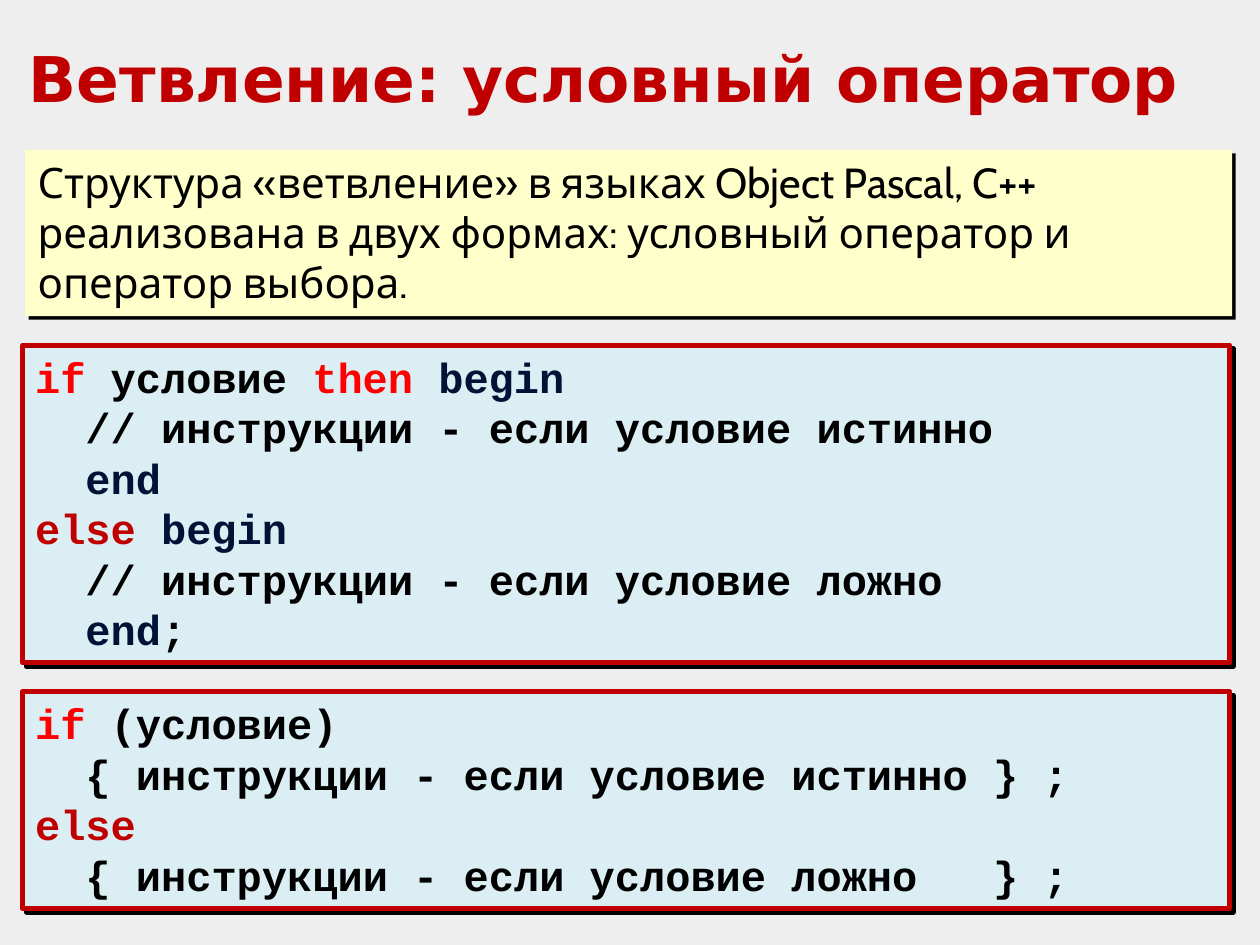
import pptx
import pptx.util
import pptx.dml.color
import pptx.enum.shapes
import pptx.enum.text
import pptx.oxml
import pptx.oxml.ns

THEME = {
    "bg": "EEEEEE", "title": "C00000", "note": "FFFFCC", "code": "DBEEF4",
    "border": "C00000", "text": "000000", "if": "FF0000", "else": "C00000",
    "block": "001236", "shadow": "000000",
    "title_size": 36, "body_size": 24, "border_width": 3,
    "title_font": "DejaVu Sans", "note_font": "Cabin", "code_font": "Courier New",
}

TITLE = "Ветвление: условный оператор"
NOTE = [[("Структура «ветвление» в языках Object Pascal, C++  реализована в двух формах: "
          "условный оператор и оператор выбора.", "text")]]
PASCAL = [
    [("if ", "if"), ("условие ", "text"), ("then ", "if"), ("begin", "block")],
    [("  // инструкции - если условие истинно", "text")],
    [("  end", "block")],
    [("else ", "else"), ("begin", "block")],
    [("  // инструкции - если условие ложно", "text")],
    [("  end", "block"), (";", "text")],
]
CPP = [
    [("if ", "if"), ("(условие)", "text")],
    [("  { инструкции - если условие истинно } ;", "text")],
    [("else", "else")],
    [("  { инструкции - если условие ложно   } ;", "text")],
]

W, H = 10, 7.5
TITLE_BOX = (0.13, 0.26, 9.63, 0.71)
LEFT, WIDTH = 0.18, 9.58
GAP, LINE, PAD = 0.23, 0.4, 0.12
NOTE_TOP, NOTE_LINES = 1.19, 3


def rgb(key):
    return pptx.dml.color.RGBColor.from_string(THEME[key])


def place(sp, box):
    sp.left, sp.top, sp.width, sp.height = map(pptx.util.Inches, box)


def write(tf, lines, font, size, bold):
    tf.word_wrap = True
    for i, line in enumerate(lines):
        p = tf.paragraphs[0] if i == 0 else tf.add_paragraph()
        p.alignment = pptx.enum.text.PP_ALIGN.LEFT
        for text, color in line:
            r = p.add_run()
            r.text = text
            r.font.name = THEME[font]
            r.font.size = pptx.util.Pt(THEME[size])
            r.font.bold = bold
            r.font.color.rgb = rgb(color)


def add_shadow(sp):
    sp.shadow.inherit = False
    effects = sp._element.spPr.find(pptx.oxml.ns.qn("a:effectLst"))
    effects.append(pptx.oxml.parse_xml(
        f'<a:outerShdw {pptx.oxml.ns.nsdecls("a")} dist="{pptx.util.Pt(2.8)}" '
        f'dir="{45 * 60000}" algn="ctr" rotWithShape="0">'
        f'<a:srgbClr val="{THEME["shadow"]}"/></a:outerShdw>'))


def add_panel(s, box, lines, fill, font, code):
    sp = s.shapes.add_shape(pptx.enum.shapes.MSO_SHAPE.RECTANGLE, 0, 0, 0, 0)
    place(sp, box)
    sp.fill.solid()
    sp.fill.fore_color.rgb = rgb(fill)
    if code:
        sp.line.color.rgb = rgb("border")
        sp.line.width = pptx.util.Pt(THEME["border_width"])
    else:
        sp.line.fill.background()
    add_shadow(sp)
    sp.text_frame.vertical_anchor = pptx.enum.text.MSO_ANCHOR.TOP
    write(sp.text_frame, lines, font, "body_size", code)


def main():
    prs = pptx.Presentation()
    prs.slide_width, prs.slide_height = pptx.util.Inches(W), pptx.util.Inches(H)
    s = prs.slides.add_slide(prs.slide_layouts[5])
    s.background.fill.solid()
    s.background.fill.fore_color.rgb = rgb("bg")

    title = s.shapes.title
    place(title, TITLE_BOX)
    title.text_frame.vertical_anchor = pptx.enum.text.MSO_ANCHOR.TOP
    write(title.text_frame, [[(TITLE, "title")]], "title_font", "title_size", True)

    panels = [
        (NOTE, NOTE_LINES, 0.02, "note", "note_font", False),
        (PASCAL, len(PASCAL), 0, "code", "code_font", True),
        (CPP, len(CPP), 0, "code", "code_font", True),
    ]
    top = NOTE_TOP
    for lines, rows, inset, fill, font, code in panels:
        height = rows * LINE + PAD
        add_panel(s, (LEFT + inset, top, WIDTH, height), lines, fill, font, code)
        top += height + GAP

    prs.save("out.pptx")


if __name__ == "__main__":
    main()
